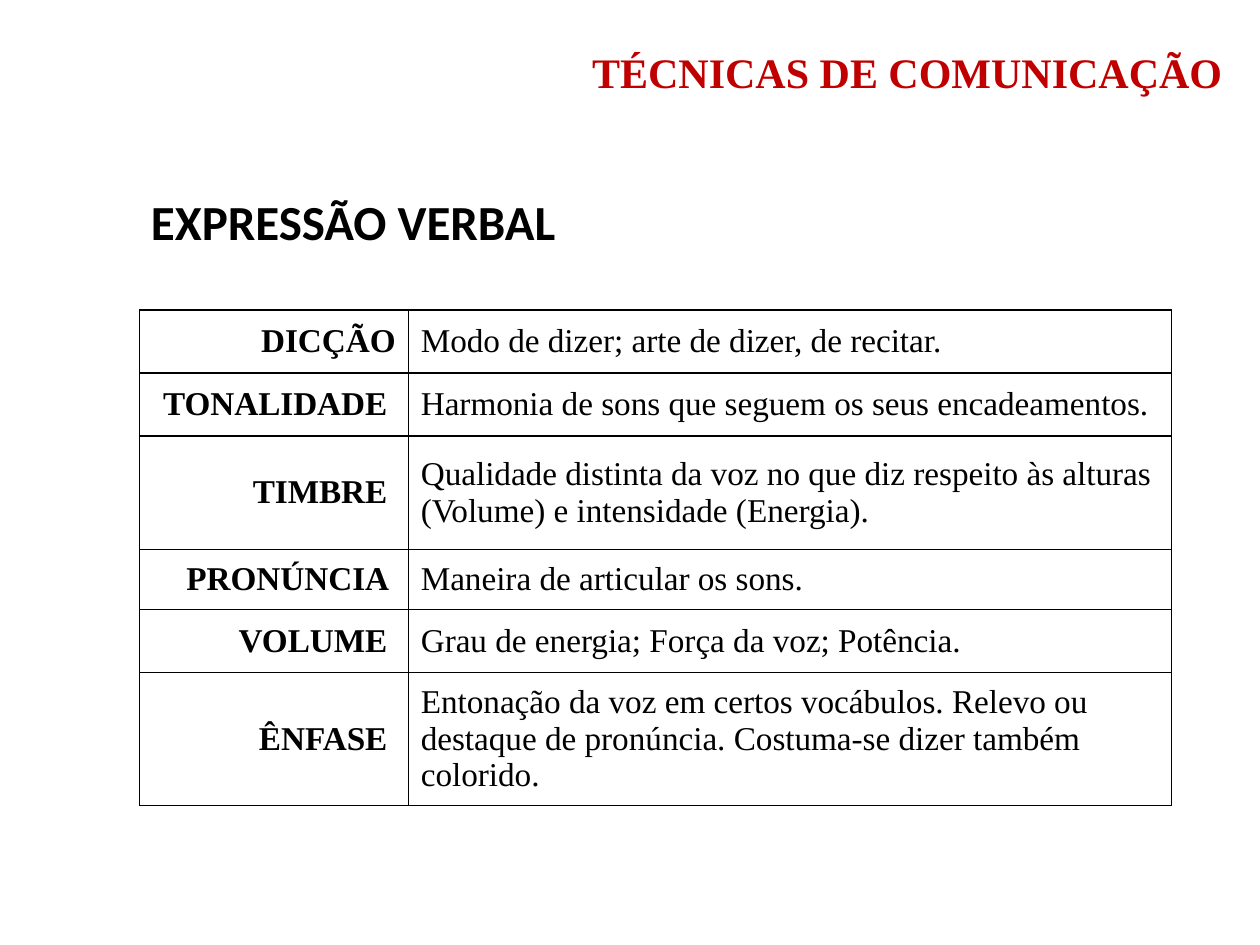
from lxml import etree
from pptx import Presentation
from pptx.dml.color import RGBColor
from pptx.enum.text import MSO_ANCHOR, MSO_AUTO_SIZE, PP_ALIGN
from pptx.oxml.ns import qn
from pptx.util import Inches, Pt

LEFT, RIGHT = PP_ALIGN.LEFT, PP_ALIGN.RIGHT
TOP, MIDDLE = MSO_ANCHOR.TOP, MSO_ANCHOR.MIDDLE
GROW = MSO_AUTO_SIZE.SHAPE_TO_FIT_TEXT
BLACK = RGBColor(0x00, 0x00, 0x00)
RED = RGBColor(0xC0, 0x00, 0x00)
SERIF, SANS = "Times New Roman", "Calibri"
TITLE_ONLY = 5

COLUMN_WIDTHS = [2.13, 6.06]
# Term, definition, row height
TERMS = [
    ("DICÇÃO", "Modo de dizer; arte de dizer, de recitar.", 0.5),
    ("TONALIDADE ", "Harmonia de sons que seguem os seus encadeamentos.", 0.5),
    ("TIMBRE ", "Qualidade distinta da voz no que diz respeito às alturas "
     "(Volume) e intensidade (Energia).", 0.9),
    ("PRONÚNCIA ", "Maneira de articular os sons.", 0.48),
    ("VOLUME ", "Grau de energia; Força da voz; Potência.", 0.5),
    ("ÊNFASE ", "Entonação da voz em certos vocábulos. Relevo ou destaque de "
     "pronúncia. Costuma-se dizer também colorido.", 1.05),
]


class SlideBuilder:
    """Holds the text styles and the current slide."""

    title_font = {"name": SERIF, "size": Pt(24), "bold": True}
    heading_font = {"name": SANS, "size": Pt(28), "bold": True}
    term_font = {"name": SERIF, "size": Pt(19), "bold": True}
    definition_font = {**term_font, "bold": False}
    border_width = Pt(0.75)

    def __init__(self, slide):
        self.slide = slide

    def add_text(self, frame, text, font, color=BLACK, align=LEFT):
        para = frame.paragraphs[0]
        para.alignment = align
        span = para.add_run()
        span.text = text
        for name, value in font.items():
            setattr(span.font, name, value)
        span.font.color.rgb = color

    def place(self, box, left, top, width, height):
        position = {"left": left, "top": top, "width": width, "height": height}
        for name, value in position.items():
            setattr(box, name, Inches(value))
        frame = box.text_frame
        settings = {"word_wrap": True, "auto_size": GROW, "vertical_anchor": TOP}
        for name, value in settings.items():
            setattr(frame, name, value)
        return frame

    def title(self, text, *bounds):
        frame = self.place(self.slide.shapes.title, *bounds)
        self.add_text(frame, text, self.title_font, RED, RIGHT)

    def heading(self, text, *bounds):
        box = self.slide.shapes.add_textbox(0, 0, 0, 0)
        self.add_text(self.place(box, *bounds), text, self.heading_font)

    def border(self, cell):
        properties = cell._tc.get_or_add_tcPr()
        for index, side in enumerate(("a:lnL", "a:lnR", "a:lnT", "a:lnB")):
            line = etree.Element(qn(side), w=str(self.border_width))
            fill = etree.SubElement(line, qn("a:solidFill"))
            etree.SubElement(fill, qn("a:srgbClr"), val=str(BLACK))
            properties.insert(index, line)

    def table(self, rows, widths, left, top):
        heights = [row[-1] for row in rows]
        table = self.slide.shapes.add_table(
            len(rows), len(widths), Inches(left), Inches(top),
            Inches(sum(widths)), Inches(sum(heights))).table
        table.first_row = table.horz_banding = False
        for column, width in zip(table.columns, widths):
            column.width = Inches(width)
        styles = [(self.term_font, RIGHT), (self.definition_font, LEFT)]
        for row, (*texts, height) in zip(table.rows, rows):
            row.height = Inches(height)
            for cell, text, (font, align) in zip(row.cells, texts, styles):
                cell.fill.background()
                cell.vertical_anchor = MIDDLE
                self.border(cell)
                self.add_text(cell.text_frame, text, font, align=align)


def main():
    deck = Presentation()
    deck.slide_width, deck.slide_height = Inches(10), Inches(7.5)
    page = SlideBuilder(deck.slides.add_slide(deck.slide_layouts[TITLE_ONLY]))

    # Title and heading
    page.title("TÉCNICAS DE COMUNICAÇÃO", 4.4, 0.32, 5.4, 0.5)
    page.heading("EXPRESSÃO VERBAL", 1.1, 1.47, 5.04, 0.57)

    # Terms and definitions
    page.table(TERMS, COLUMN_WIDTHS, 1.11, 2.46)

    deck.save("out.pptx")


if __name__ == "__main__":
    main()
